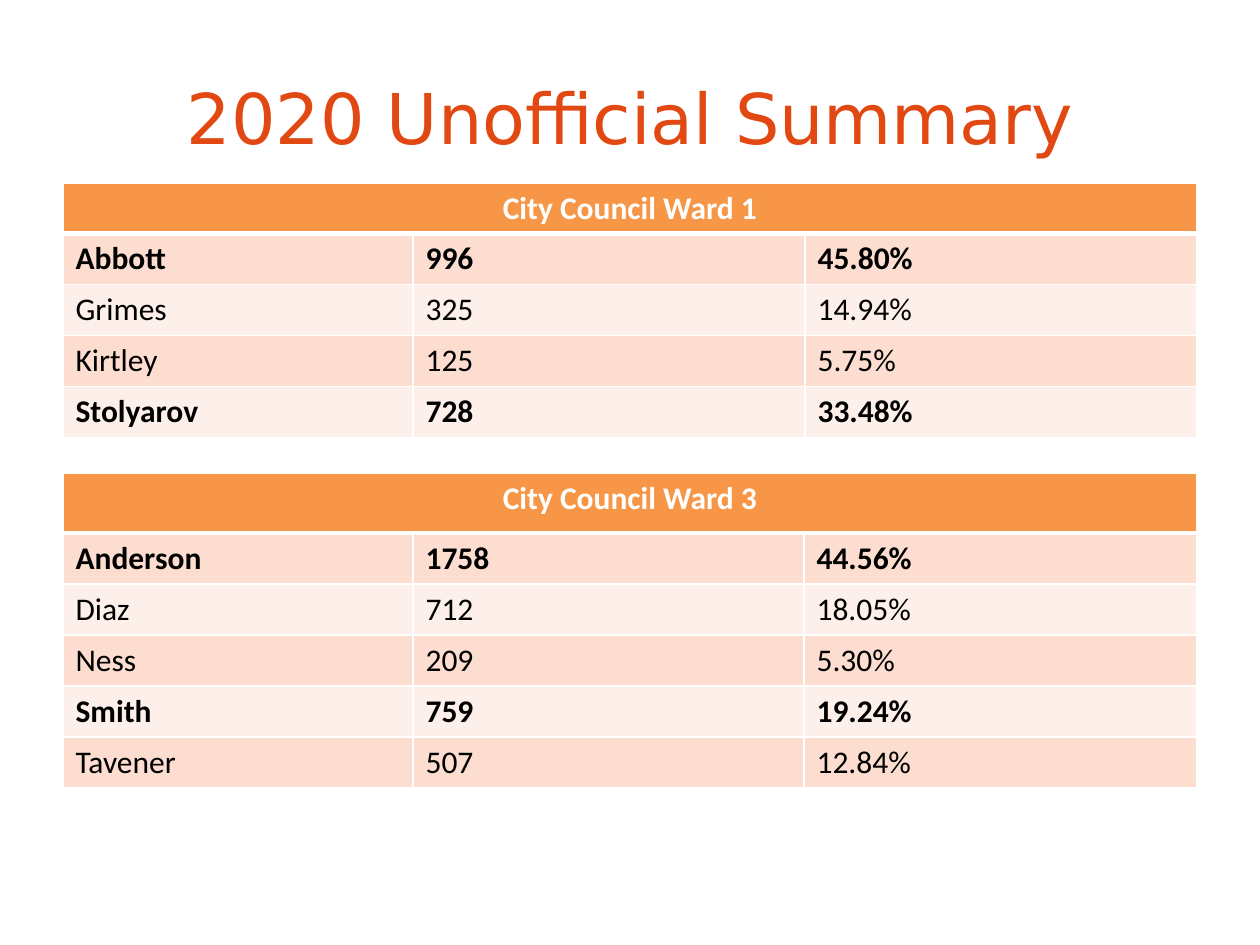
from dataclasses import dataclass

from lxml.etree import SubElement
from pptx import Presentation
from pptx.dml.color import RGBColor
from pptx.enum.text import MSO_ANCHOR as Anchor, PP_ALIGN as Align
from pptx.oxml.ns import qn
from pptx.slide import Slide
from pptx.util import Emu, Pt

PX = 914400 / 126
COLORS = {
    "title": "E24912",
    "header": "F79646",
    "odd": "FCDDCF",
    "even": "FDEFE9",
    "white": "FFFFFF",
    "black": "000000",
}
TITLE_FONT = {"name": "DejaVu Sans", "size": Pt(40)}
TABLE_FONT = {"name": "Calibri", "size": Pt(18)}
LEFT, WIDTH, ROW_HEIGHT = 63, 1134, 51
THIN, THICK = Pt(1), Pt(3)


@dataclass(frozen=True)
class Candidate:
    name: str
    votes: str
    share: str
    leading: bool = False


@dataclass(frozen=True)
class Race:
    heading: str
    top: int
    header_height: int
    columns: tuple[int, ...]
    candidates: tuple[Candidate, ...]


RACES = (
    Race("City Council Ward 1", 183, 42, (350, 392, 392), (
        Candidate("Abbott", "996", "45.80%", True),
        Candidate("Grimes", "325", "14.94%"),
        Candidate("Kirtley", "125", "5.75%"),
        Candidate("Stolyarov", "728", "33.48%", True),
    )),
    Race("City Council Ward 3", 473, 60, (350, 391, 393), (
        Candidate("Anderson", "1758", "44.56%", True),
        Candidate("Diaz", "712", "18.05%"),
        Candidate("Ness", "209", "5.30%"),
        Candidate("Smith", "759", "19.24%", True),
        Candidate("Tavener", "507", "12.84%"),
    )),
)


def px(length: int) -> Emu:
    return Emu(round(length * PX))


def rgb(color: str) -> RGBColor:
    return RGBColor.from_string(COLORS[color])


def write(paragraph, text: str, color: str, formats: dict, align=Align.LEFT) -> None:
    run = paragraph.add_run()
    run.text = text
    paragraph.alignment = align
    for attribute, value in formats.items():
        setattr(run.font, attribute, value)
    run.font.color.rgb = rgb(color)


def add_borders(cell, top: int = THIN, bottom: int = THIN) -> None:
    """Draw white borders; must run before the cell gets its fill."""
    properties = cell._tc.get_or_add_tcPr()
    for side, width in {"L": THIN, "R": THIN, "T": top, "B": bottom}.items():
        line = SubElement(properties, qn(f"a:ln{side}"), w=str(width))
        fill = SubElement(line, qn("a:solidFill"))
        SubElement(fill, qn("a:srgbClr"), val=COLORS["white"])


def fill_cell(cell, color: str) -> None:
    cell.fill.solid()
    cell.fill.fore_color.rgb = rgb(color)


def add_title(slide: Slide, text: str) -> None:
    frame = slide.shapes.add_textbox(px(LEFT), px(38), px(WIDTH), px(158)).text_frame
    frame.word_wrap = True
    frame.vertical_anchor = Anchor.MIDDLE
    write(frame.paragraphs[0], text, "title", TITLE_FONT, Align.CENTER)


def add_race(slide: Slide, race: Race) -> None:
    count = len(race.candidates)
    height = race.header_height + count * ROW_HEIGHT
    table = slide.shapes.add_table(
        count + 1, len(race.columns), px(LEFT), px(race.top), px(WIDTH), px(height)
    ).table
    for column, width in zip(table.columns, race.columns):
        column.width = px(width)
    for row, row_height in zip(table.rows, [race.header_height] + [ROW_HEIGHT] * count):
        row.height = px(row_height)

    for cell in table.rows[0].cells:
        add_borders(cell, bottom=THICK)
        fill_cell(cell, "header")
    heading = table.cell(0, 0)
    heading.merge(table.cell(0, len(race.columns) - 1))
    write(heading.text_frame.paragraphs[0], race.heading, "white",
          TABLE_FONT | {"bold": True}, Align.CENTER)

    for number, candidate in enumerate(race.candidates, 1):
        values = (candidate.name, candidate.votes, candidate.share)
        for cell, value in zip(table.rows[number].cells, values):
            add_borders(cell, top=THICK if number == 1 else THIN)
            fill_cell(cell, "odd" if number % 2 else "even")
            write(cell.text_frame.paragraphs[0], value, "black",
                  TABLE_FONT | {"bold": candidate.leading})


def main() -> None:
    deck = Presentation()
    deck.slide_width, deck.slide_height = px(1260), px(945)
    slide = deck.slides.add_slide(deck.slide_layouts[6])
    add_title(slide, "2020 Unofficial Summary")
    for race in RACES:
        add_race(slide, race)
    deck.save("out.pptx")


if __name__ == "__main__":
    main()
